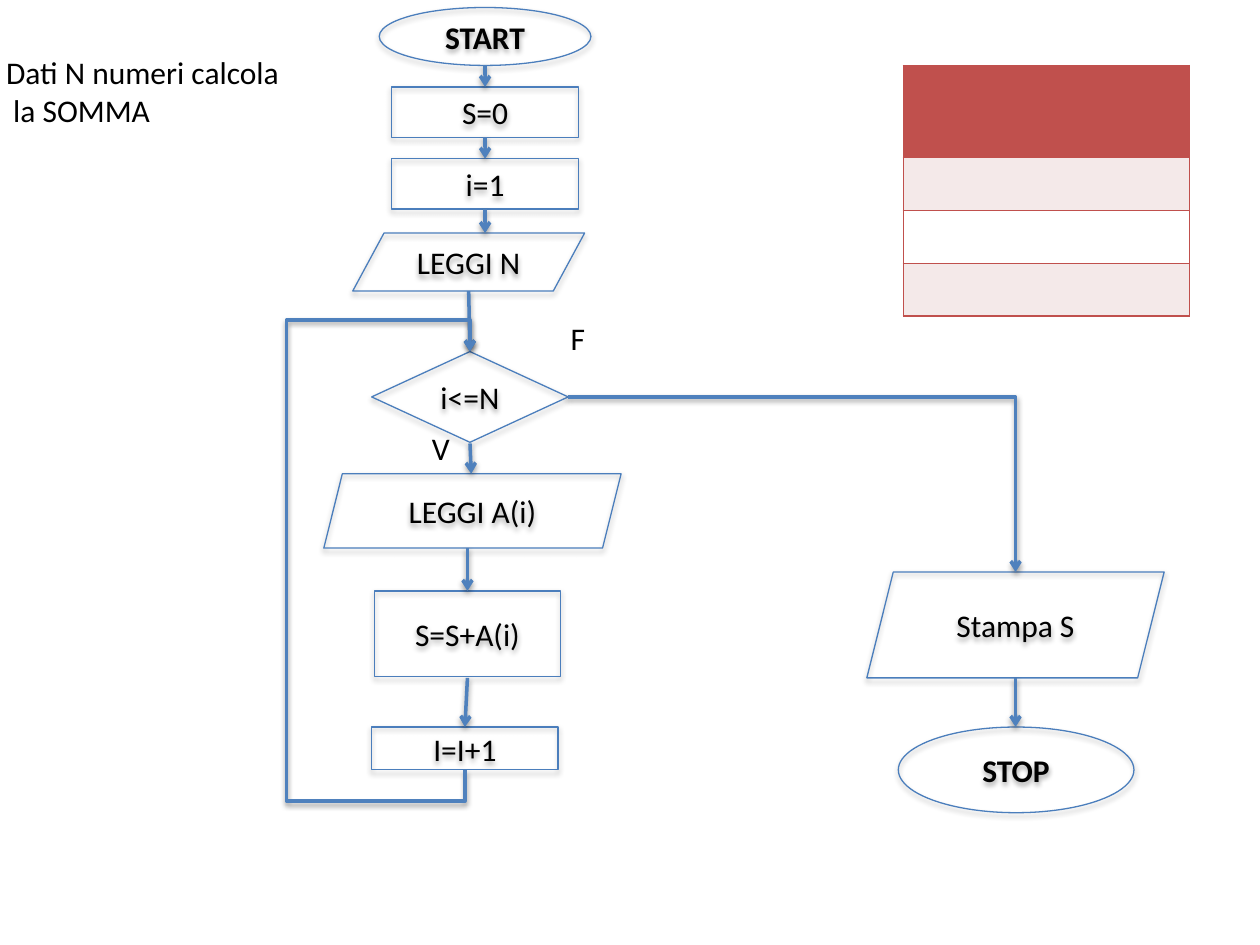
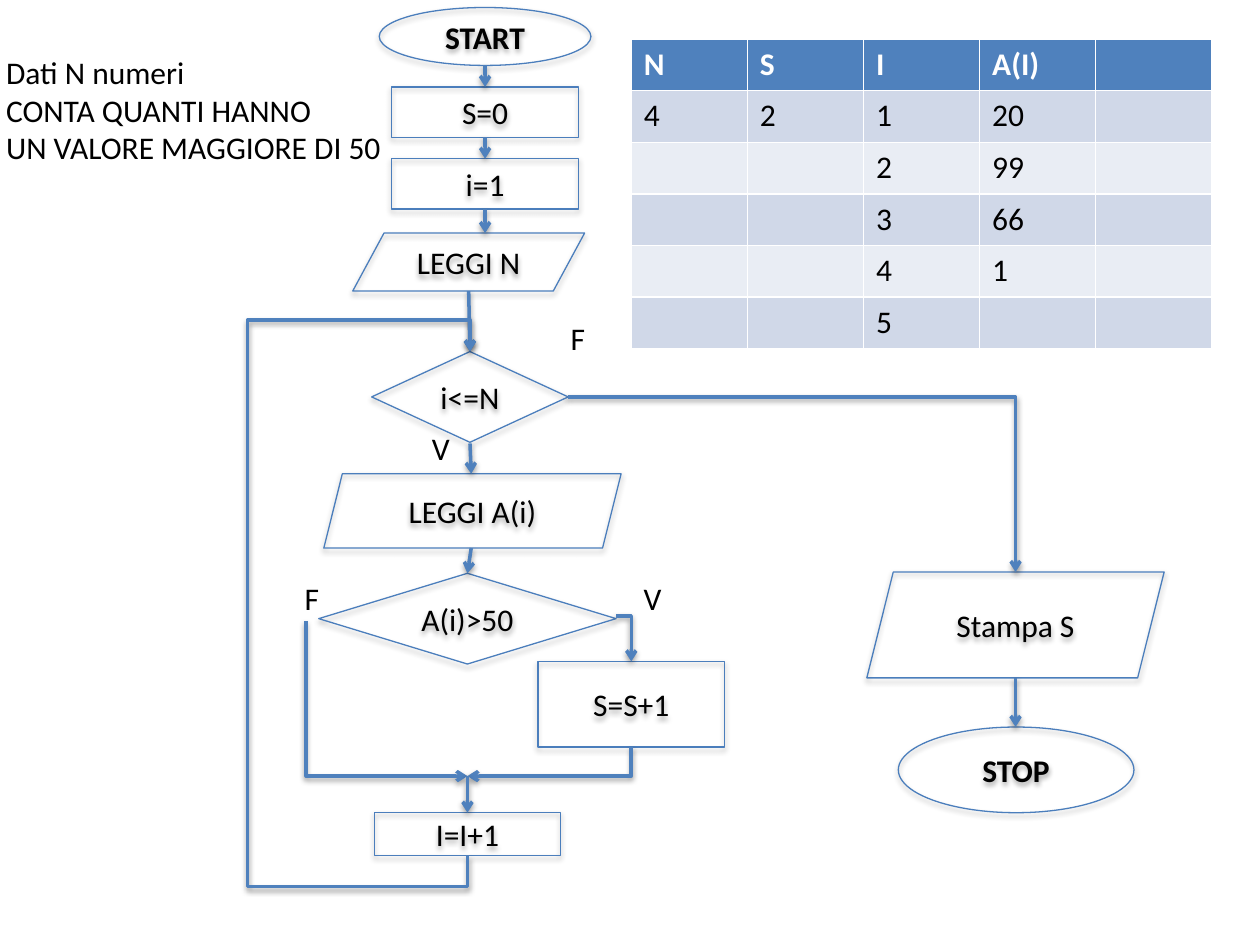
from lxml.etree import SubElement
from pptx import Presentation
from pptx.dml.color import RGBColor
from pptx.enum.shapes import MSO_CONNECTOR, MSO_SHAPE
from pptx.enum.text import MSO_ANCHOR, MSO_AUTO_SIZE, PP_ALIGN
from pptx.oxml.ns import qn
from pptx.util import Inches, Pt

BLACK, WHITE = "000000", "FFFFFF"
EDGE, BLUE, RED = "4B7EBC", "4F81BD", "C0504D"
FONT = {"name": "Calibri", "size": Pt(18), "bold": False}
FRAME = {"vertical_anchor": MSO_ANCHOR.MIDDLE, "word_wrap": True}
LABEL = {"word_wrap": False, "auto_size": MSO_AUTO_SIZE.SHAPE_TO_FIT_TEXT}
SHAPES = {
    "oval": MSO_SHAPE.OVAL,
    "rect": MSO_SHAPE.RECTANGLE,
    "data": MSO_SHAPE.PARALLELOGRAM,
    "test": MSO_SHAPE.DIAMOND,
}
GAP = 0.25


def paint(code):
    return RGBColor.from_string(code)


def style(item, values):
    for key, value in values.items():
        setattr(item, key, value)


def write(frame, text, color=BLACK, bold=False, align=PP_ALIGN.LEFT):
    frame.text = text
    for para in frame.paragraphs:
        para.alignment = align
        for run in para.runs:
            style(run.font, {**FONT, "bold": bold})
            run.font.color.rgb = paint(color)


def shade(shape, alpha, dist):
    effect = SubElement(shape._element.spPr, qn("a:effectLst"))
    outer = SubElement(effect, qn("a:outerShdw"), blurRad="40000",
                       dist=str(dist), dir="5400000", rotWithShape="0")
    color = SubElement(outer, qn("a:srgbClr"), val=BLACK)
    SubElement(color, qn("a:alpha"), val=str(alpha * 1000))


def node(slide, kind, text, box, slant=None):
    shape = slide.shapes.add_shape(SHAPES[kind], *map(Inches, box))
    if slant:
        shape.adjustments[0] = slant
    shape.fill.background()
    shape.line.color.rgb = paint(EDGE)
    shape.line.width = Pt(0.75)
    shade(shape, 35, 23000)
    style(shape.text_frame, FRAME)
    write(shape.text_frame, text, bold=kind == "oval", align=PP_ALIGN.CENTER)


def label(slide, text, box):
    frame = slide.shapes.add_textbox(*map(Inches, box)).text_frame
    style(frame, LABEL)
    write(frame, text)


def arrow(slide, start, end, kind=MSO_CONNECTOR.STRAIGHT):
    link = slide.shapes.add_connector(kind, *map(Inches, (*start, *end)))
    link.line.color.rgb = paint(BLUE)
    link.line.width = Pt(2)
    SubElement(link.line._get_or_add_ln(), qn("a:tailEnd"), type="arrow")
    shade(link, 38, 20000)
    return link


def bend(slide, start, end, parts=2, ratios=(), turn=False):
    if turn:
        mid = [(a + b) / 2 for a, b in zip(start, end)]
        dx, dy = start[0] - mid[0], start[1] - mid[1]
        start = mid[0] + dy, mid[1] - dx
        end = mid[0] - dy, mid[1] + dx
    link = arrow(slide, start, end, MSO_CONNECTOR.ELBOW)
    props = link._element.spPr
    if turn:
        props.find(qn("a:xfrm")).set("rot", "5400000")
    shape = props.find(qn("a:prstGeom"))
    shape.set("prst", f"bentConnector{parts}")
    guides = shape.find(qn("a:avLst"))
    for num, ratio in enumerate(ratios, 1):
        SubElement(guides, qn("a:gd"), name=f"adj{num}",
                   fmla=f"val {round(ratio * 100000)}")


def loop(slide, start, end, left):
    out = GAP / (start[1] - end[1])
    side = (left - start[0]) / (end[0] - start[0])
    bend(slide, start, end, 5, (-out, side, 1 + out), turn=True)


def border(cell, sides):
    props = cell._tc.get_or_add_tcPr()
    for side in "LRTB":
        line = SubElement(props, qn(f"a:ln{side}"), w=str(Pt(1)))
        if side in sides:
            fill = SubElement(line, qn("a:solidFill"))
            SubElement(fill, qn("a:srgbClr"), val=RED)
        else:
            SubElement(line, qn("a:noFill"))


def grid(slide, rows, box, tops, fills, framed=False):
    last = len(rows[0]) - 1
    table = slide.shapes.add_table(len(rows), last + 1,
                                   *map(Inches, box)).table
    for i, row in enumerate(rows):
        table.rows[i].height = Inches(tops[min(i, 1)])
        fill = fills[0] if i == 0 else fills[2 - i % 2]
        for j, text in enumerate(row):
            cell = table.cell(i, j)
            if framed:
                border(cell, "TB" + "L" * (j == 0) + "R" * (j == last))
            cell.fill.solid()
            cell.fill.fore_color.rgb = paint(fill)
            write(cell.text_frame, text, BLACK if i else WHITE, i == 0)


def base(slide, title, width, height):
    label(slide, title, (-0.05, 0.37, width, height))
    node(slide, "oval", "START", (3.01, 0.06, 1.68, 0.46))
    node(slide, "rect", "S=0", (3.11, 0.69, 1.48, 0.4))
    node(slide, "rect", "i=1", (3.11, 1.26, 1.48, 0.4))
    node(slide, "data", "LEGGI N", (2.8, 1.85, 1.84, 0.46), 0.54)
    node(slide, "test", "i<=N", (2.95, 2.79, 1.56, 0.72))
    node(slide, "data", "LEGGI A(i)", (2.57, 3.76, 2.36, 0.59))
    node(slide, "data", "Stampa S", (6.88, 4.54, 2.36, 0.84))
    node(slide, "oval", "STOP", (7.13, 5.77, 1.87, 0.68))
    label(slide, "V", (3.33, 3.36, 0.35, 0.4))
    label(slide, "F", (4.43, 2.48, 0.32, 0.4))
    for top, low in ((0.52, 0.69), (1.09, 1.26), (1.66, 1.85)):
        arrow(slide, (3.85, top), (3.85, low))
    arrow(slide, (3.72, 2.31), (3.73, 2.79))
    arrow(slide, (3.73, 3.52), (3.74, 3.76))
    bend(slide, (4.51, 3.15), (8.06, 4.54))
    arrow(slide, (8.06, 5.38), (8.06, 5.77))


def total(slide):
    base(slide, "Dati N numeri calcola\n la SOMMA", 2.39, 0.71)
    node(slide, "rect", "S=S+A(i)", (2.97, 4.69, 1.48, 0.68))
    node(slide, "rect", "I=I+1", (2.95, 5.77, 1.48, 0.34))
    arrow(slide, (3.71, 4.35), (3.71, 4.69))
    arrow(slide, (3.71, 5.38), (3.69, 5.77))
    loop(slide, (3.69, 6.11), (3.73, 2.79), 2.28)
    grid(slide, [[""] * 3] * 4, (7.17, 0.52, 2.27, 2.01), (0.73, 0.42),
         (RED, "F4E9E9", WHITE), framed=True)


def count(slide):
    base(slide, "Dati N numeri\nCONTA QUANTI HANNO\nUN VALORE MAGGIORE DI 50",
         3.21, 1.01)
    node(slide, "test", "A(i)>50", (2.53, 4.55, 2.36, 0.72))
    node(slide, "rect", "S=S+1", (4.27, 5.25, 1.48, 0.68))
    node(slide, "rect", "I=I+1", (2.97, 6.45, 1.48, 0.34))
    label(slide, "F", (2.32, 4.55, 0.32, 0.4))
    label(slide, "V", (5.01, 4.55, 0.35, 0.4))
    arrow(slide, (3.74, 4.35), (3.71, 4.55))
    bend(slide, (4.89, 4.89), (5.01, 5.25))
    bend(slide, (2.43, 4.93), (3.71, 6.16), 3, (0,))
    bend(slide, (5.01, 5.93), (3.71, 6.16), turn=True)
    arrow(slide, (3.71, 6.16), (3.71, 6.45))
    loop(slide, (3.71, 6.79), (3.73, 2.79), 1.97)
    rows = [
        ["N", "S", "I", "A(I)", ""],
        ["4", "2", "1", "20", ""],
        ["", "", "2", "99", ""],
        ["", "", "3", "66", ""],
        ["", "", "4", "1", ""],
        ["", "", "5", "", ""],
    ]
    grid(slide, rows, (5.01, 0.31, 4.61, 2.43), (0.41, 0.41),
         (BLUE, "D0D8E8", "E9EDF4"))


def main():
    deck = Presentation()
    style(deck, {"slide_width": Inches(10), "slide_height": Inches(7.5)})
    for draw in (total, count):
        draw(deck.slides.add_slide(deck.slide_layouts[6]))
    deck.save("out.pptx")


if __name__ == "__main__":
    main()
